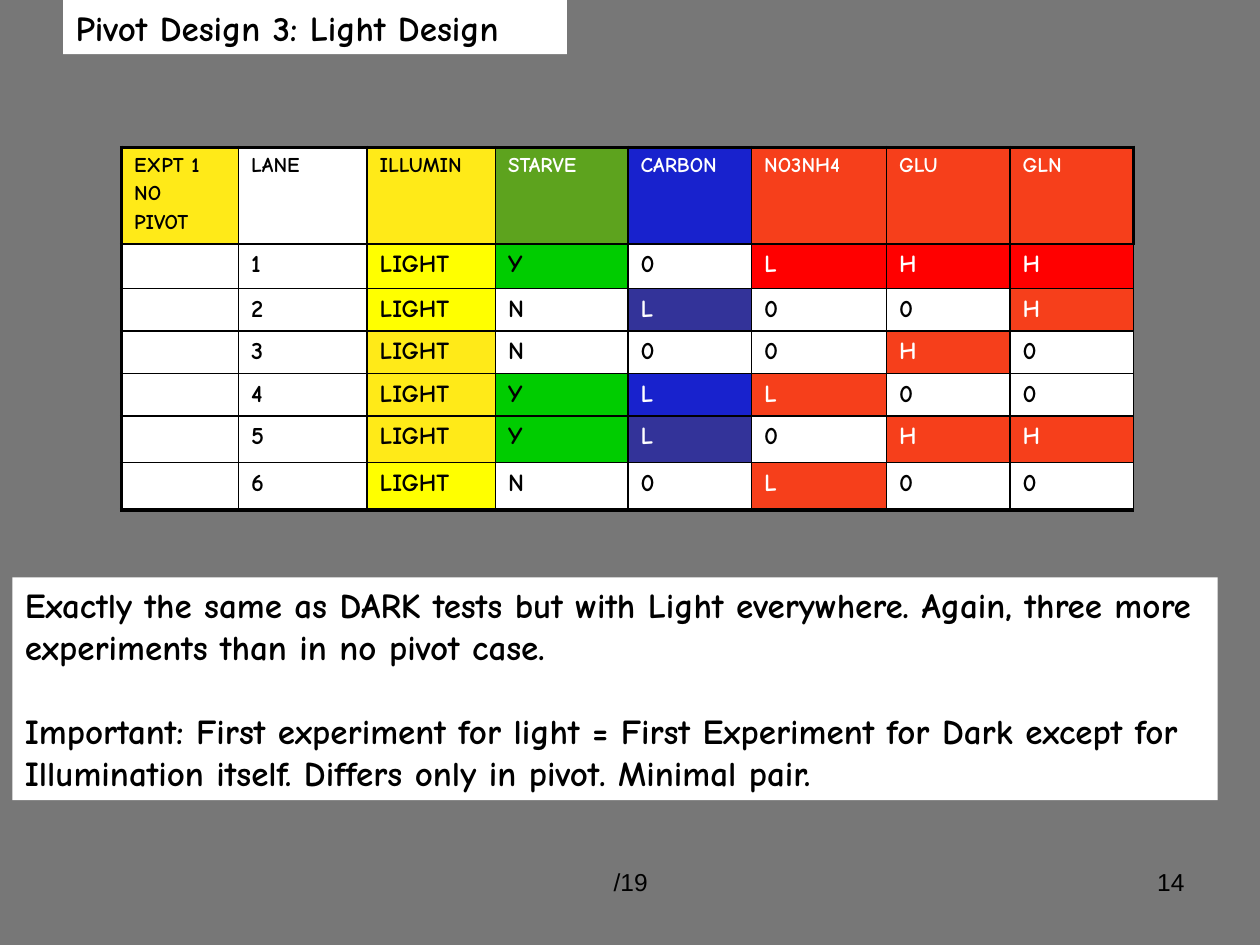
import dataclasses

import lxml.etree
import pptx
import pptx.dml.color
import pptx.enum.text
import pptx.oxml.ns
import pptx.util

Cm = pptx.util.Cm
Pt = pptx.util.Pt
RGB = pptx.dml.color.RGBColor
Align = pptx.enum.text.PP_ALIGN

BLACK = RGB(0x00, 0x00, 0x00)
WHITE = RGB(0xFF, 0xFF, 0xFF)
GRAY = RGB(0x77, 0x77, 0x77)
GOLD = RGB(0xFF, 0xEA, 0x18)
YELLOW = RGB(0xFF, 0xFF, 0x00)
OLIVE = RGB(0x5D, 0xA3, 0x1E)
GREEN = RGB(0x00, 0xCC, 0x00)
BLUE = RGB(0x18, 0x22, 0xCD)
NAVY = RGB(0x33, 0x33, 0x99)
ORANGE = RGB(0xF6, 0x3F, 0x1B)
RED = RGB(0xFF, 0x00, 0x00)
DARK = {OLIVE, BLUE, NAVY, ORANGE, RED}

COLS = [2.36, 2.59, 2.59, 2.67, 2.49, 2.72, 2.49, 2.49]
THIN, THICK = 1, 2.25
HAND = {"name": "Comic Neue", "bold": True}
PLAIN = {"name": "Arial", "size": Pt(14)}


@dataclasses.dataclass
class Row:
    high: float
    texts: list[str]
    fills: list[RGB]


@dataclasses.dataclass
class Box:
    left: float
    top: float
    width: float
    height: float
    texts: list[str]
    look: dict
    fill: RGB | None = None
    align: Align = Align.LEFT
    gap: float = 0


ROWS = [
    Row(1.95, ["EXPT 1\nNO\nPIVOT", "LANE", "ILLUMIN", "STARVE", "CARBON", "NO3NH4", "GLU", "GLN"],
        [GOLD, WHITE, GOLD, OLIVE, BLUE, ORANGE, ORANGE, ORANGE]),
    Row(0.9, ["", "1", "LIGHT", "Y", "0", "L", "H", "H"],
        [WHITE, WHITE, YELLOW, GREEN, WHITE, RED, RED, RED]),
    Row(0.84, ["", "2", "LIGHT", "N", "L", "0", "0", "H"],
        [WHITE, WHITE, YELLOW, WHITE, NAVY, WHITE, WHITE, ORANGE]),
    Row(0.84, ["", "3", "LIGHT", "N", "0", "0", "H", "0"],
        [WHITE, WHITE, GOLD, WHITE, WHITE, WHITE, ORANGE, WHITE]),
    Row(0.84, ["", "4", "LIGHT", "Y", "L", "L", "0", "0"],
        [WHITE, WHITE, GOLD, GREEN, BLUE, ORANGE, WHITE, WHITE]),
    Row(0.94, ["", "5", "LIGHT", "Y", "L", "0", "H", "H"],
        [WHITE, WHITE, GOLD, GREEN, NAVY, WHITE, ORANGE, ORANGE]),
    Row(0.95, ["", "6", "LIGHT", "N", "0", "L", "0", "0"],
        [WHITE, WHITE, YELLOW, WHITE, WHITE, ORANGE, WHITE, WHITE]),
]

TITLE = Box(1.27, 0, 10.16, 1.09, ["Pivot Design 3: Light Design"],
            HAND | {"size": Pt(20)}, WHITE)
BOXES = [
    Box(0.25, 11.64, 24.3, 4.49, [
        "Exactly the same as DARK tests but with Light everywhere. "
        "Again, three more experiments than in no pivot case.",
        "Important: First experiment for light = First Experiment for Dark "
        "except for Illumination itself. Differs only in pivot. Minimal pair.",
    ], HAND | {"size": Pt(20)}, WHITE, gap=24),
    Box(8.69, 17.35, 8.05, 1.32, ["/19"], PLAIN, align=Align.CENTER),
    Box(18.21, 17.35, 5.92, 1.32, ["14"], PLAIN, align=Align.RIGHT),
]


def style(font, look: dict, color: RGB) -> None:
    for key, val in look.items():
        setattr(font, key, val)
    font.color.rgb = color


def fill_box(shape, box: Box) -> None:
    """Place a shape and give it the text and look of its box."""
    for key in ("left", "top", "width", "height"):
        setattr(shape, key, Cm(getattr(box, key)))
    if box.fill is not None:
        shape.fill.solid()
        shape.fill.fore_color.rgb = box.fill
    frame = shape.text_frame
    frame.text = "\n".join(box.texts)
    frame.word_wrap = True
    frame.auto_size = pptx.enum.text.MSO_AUTO_SIZE.NONE
    for num, para in enumerate(frame.paragraphs):
        para.alignment = box.align
        para.space_before = Pt(box.gap if num else 0)
        style(para.runs[0].font, box.look, BLACK)


def add_edge(props, side: str, width: float) -> None:
    qn = pptx.oxml.ns.qn
    line = lxml.etree.SubElement(props, qn("a:ln" + side), w=str(Pt(width)))
    paint = lxml.etree.SubElement(line, qn("a:solidFill"))
    lxml.etree.SubElement(paint, qn("a:srgbClr"), val=str(BLACK))


def fill_cell(cell, text: str, fill: RGB, size: int, edges: dict[str, float]) -> None:
    props = cell._tc.get_or_add_tcPr()
    for side, width in edges.items():
        add_edge(props, side, width)
    cell.fill.solid()
    cell.fill.fore_color.rgb = fill
    cell.text = text
    look = HAND | {"size": Pt(size)}
    for para in cell.text_frame.paragraphs:
        para.space_before = Pt(0.2 * size)
        for run in para.runs:
            style(run.font, look, WHITE if fill in DARK else BLACK)
        if not para.runs:
            lxml.etree.SubElement(para._p, pptx.oxml.ns.qn("a:endParaRPr"), sz=str(size * 100))


def add_grid(slide) -> None:
    high = sum(row.high for row in ROWS)
    grid = slide.shapes.add_table(len(ROWS), len(COLS), Cm(2.45), Cm(2.97),
                                  Cm(sum(COLS)), Cm(high)).table
    grid.first_row = grid.horz_banding = False
    for col, width in zip(grid.columns, COLS):
        col.width = Cm(width)
    for r, row in enumerate(ROWS):
        grid.rows[r].height = Cm(row.high)
        for c, (text, fill) in enumerate(zip(row.texts, row.fills)):
            heavy = {"L": c == 0, "R": r == 0 and c == len(COLS) - 1,
                     "T": r == 0, "B": r == len(ROWS) - 1}
            edges = {side: THICK if on else THIN for side, on in heavy.items()}
            fill_cell(grid.cell(r, c), text, fill, 14 if r else 12, edges)


def main() -> None:
    deck = pptx.Presentation()
    deck.slide_width, deck.slide_height = Cm(25.4), Cm(19.05)
    slide = deck.slides.add_slide(deck.slide_layouts[5])
    slide.background.fill.solid()
    slide.background.fill.fore_color.rgb = GRAY
    fill_box(slide.shapes.title, TITLE)
    add_grid(slide)
    for box in BOXES:
        fill_box(slide.shapes.add_textbox(0, 0, 0, 0), box)
    deck.save("out.pptx")


if __name__ == "__main__":
    main()
